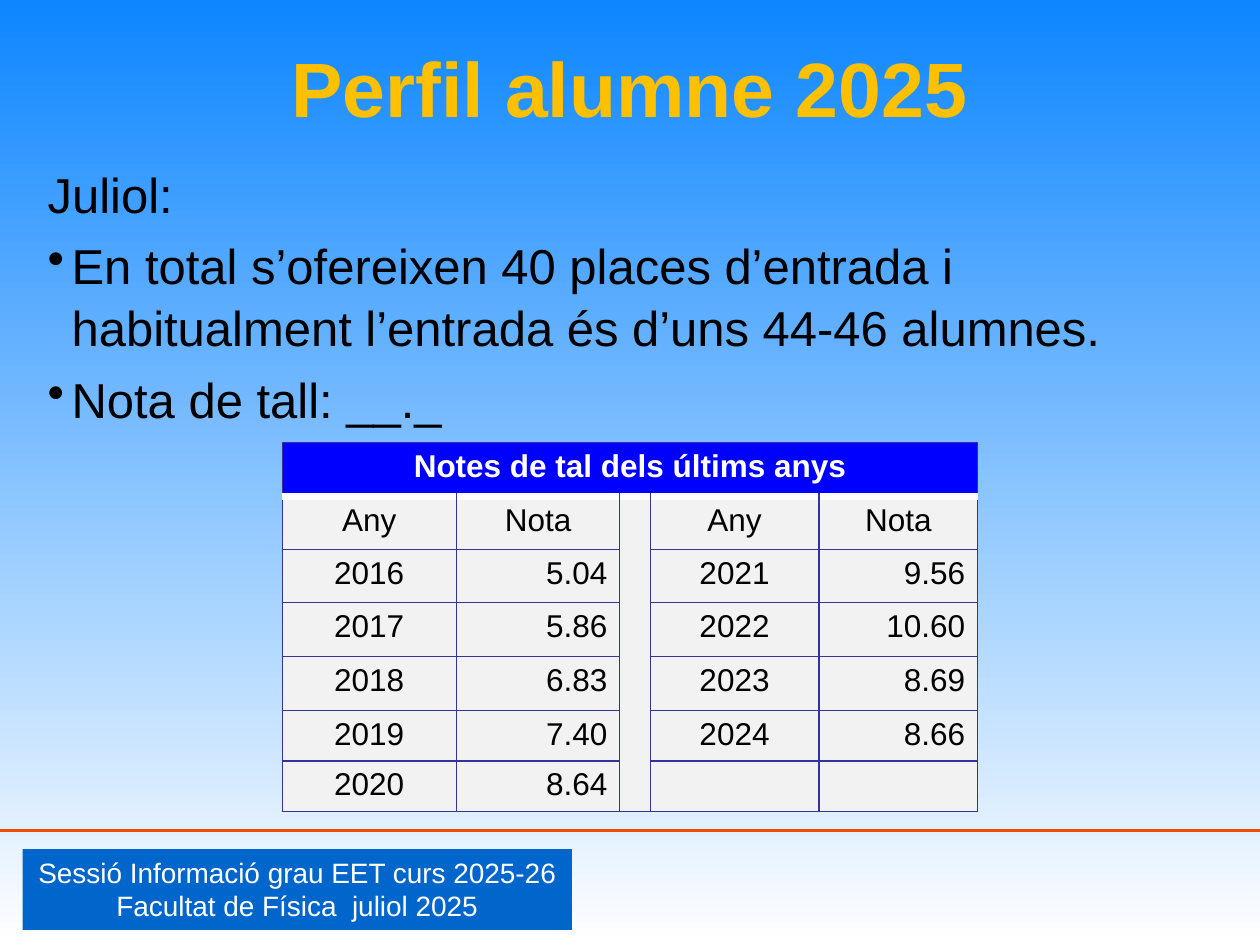
import pptx
import pptx.util
import pptx.dml.color
import pptx.enum.shapes
import pptx.enum.text
import pptx.oxml
import pptx.oxml.ns
import lxml.etree

RGB = pptx.dml.color.RGBColor
SKY = RGB(0x0D, 0x86, 0xFF)
WHITE = RGB(0xFF, 0xFF, 0xFF)
BLACK = RGB(0, 0, 0)
ORANGE = RGB(0xF0, 0x4C, 0x02)
FOOTER_BLUE = RGB(0x00, 0x66, 0xCC)
GOLD = RGB(0xFF, 0xC0, 0x00)
HEADER_BLUE = RGB(0, 0, 0xFF)
CELL_GREY = RGB(0xF2, 0xF2, 0xF2)
BORDER_BLUE = RGB(0x33, 0x33, 0x99)

ALIGN = pptx.enum.text.PP_ALIGN
ANCHOR = pptx.enum.text.MSO_ANCHOR
UNIT = pptx.util.Inches(0.1)
COLUMNS, ROWS = 100, 75

TITLE_FONT = {"name": "Arial", "size": pptx.util.Pt(44), "bold": True, "color": GOLD}
BODY_FONT = {"name": "Arial", "size": pptx.util.Pt(28), "color": BLACK}
FOOTER_FONT = {"name": "Arial", "size": pptx.util.Pt(16), "color": WHITE}
HEADER_FONT = {"name": "Arial", "size": pptx.util.Pt(18), "bold": True, "color": WHITE}
CELL_FONT = {"name": "Arial", "size": pptx.util.Pt(18), "bold": False, "color": BLACK}

COLUMN_SIZES = [13.8, 13, 2.4, 13.4, 12.6]
ROW_SIZES = [4.3, 4.2, 4.2, 4.3, 4.3, 3.7, 3.8]
GRADES = [
    ("Any", "Nota", "", "Any", "Nota"),
    ("2016", "5.04", "", "2021", "9.56"),
    ("2017", "5.86", "", "2022", "10.60"),
    ("2018", "6.83", "", "2023", "8.69"),
    ("2019", "7.40", "", "2024", "8.66"),
    ("2020", "8.64", "", "", ""),
]


def grid(*lengths):
    return [int(length * UNIT) for length in lengths]


def apply_font(font, formats):
    for attribute, value in formats.items():
        if attribute == "color":
            font.color.rgb = value
        else:
            setattr(font, attribute, value)


def write_paragraph(paragraph, text, formats, align):
    paragraph.alignment = align
    run = paragraph.add_run()
    run.text = text
    apply_font(run.font, formats)


def add_bullet(paragraph):
    properties = paragraph._p.get_or_add_pPr()
    indent = pptx.util.Inches(0.19)
    properties.set("marL", str(indent))
    properties.set("indent", str(-indent))
    bullet = lxml.etree.SubElement(properties, pptx.oxml.ns.qn("a:buChar"))
    bullet.set("char", "•")


def draw_background(slide):
    fill = slide.background.fill
    fill.gradient()
    fill.gradient_angle = 270
    for stop, color in zip(fill.gradient_stops, (SKY, WHITE)):
        stop.color.rgb = color


def draw_footer(slide, left, top, width, height):
    rule_y = top - 1.5
    rule = slide.shapes.add_connector(
        pptx.enum.shapes.MSO_CONNECTOR.STRAIGHT, *grid(0, rule_y, COLUMNS, rule_y))
    rule.line.color.rgb = ORANGE
    rule.line.width = pptx.util.Pt(1.5)
    lxml.etree.SubElement(rule._element.spPr, pptx.oxml.ns.qn("a:effectLst"))
    session = slide.shapes.add_shape(
        pptx.enum.shapes.MSO_SHAPE.RECTANGLE, *grid(left, top, width, height))
    session.shadow.inherit = False
    session.fill.solid()
    session.fill.fore_color.rgb = FOOTER_BLUE
    session.line.fill.background()
    frame = session.text_frame
    frame.word_wrap = False
    frame.vertical_anchor = ANCHOR.TOP
    write_paragraph(frame.paragraphs[0], "Sessió Informació grau EET curs 2025-26",
                    FOOTER_FONT, ALIGN.CENTER)
    write_paragraph(frame.add_paragraph(), "Facultat de Física  juliol 2025",
                    FOOTER_FONT, ALIGN.CENTER)


def draw_title(slide, *box):
    frame = slide.shapes.add_textbox(*grid(*box)).text_frame
    frame.word_wrap = True
    frame.vertical_anchor = ANCHOR.MIDDLE
    write_paragraph(frame.paragraphs[0], "Perfil alumne 2025", TITLE_FONT, ALIGN.CENTER)


def draw_body(slide, *box):
    frame = slide.shapes.add_textbox(*grid(*box)).text_frame
    frame.word_wrap = True
    heading = frame.paragraphs[0]
    heading.line_spacing = 1.05
    write_paragraph(heading, "Juliol:", BODY_FONT, ALIGN.LEFT)
    for point in (
        "En total s’ofereixen 40 places d’entrada i habitualment l’entrada és d’uns 44-46 alumnes.",
        "Nota de tall: __._",
    ):
        paragraph = frame.add_paragraph()
        add_bullet(paragraph)
        paragraph.line_spacing = 1.05
        paragraph.space_before = pptx.util.Pt(5.6)
        write_paragraph(paragraph, point, BODY_FONT, ALIGN.LEFT)


def style_cell(cell, fill, white_edge):
    properties = cell._tc.get_or_add_tcPr()
    for edge in ("lnL", "lnR", "lnT", "lnB"):
        color, points = (WHITE, 4.33) if edge == white_edge else (BORDER_BLUE, 0.75)
        border = lxml.etree.SubElement(properties, pptx.oxml.ns.qn("a:" + edge))
        border.set("w", str(pptx.util.Pt(points)))
        solid = lxml.etree.SubElement(border, pptx.oxml.ns.qn("a:solidFill"))
        lxml.etree.SubElement(solid, pptx.oxml.ns.qn("a:srgbClr")).set("val", str(color))
    cell.fill.solid()
    cell.fill.fore_color.rgb = fill


def draw_grades(slide, left, top):
    box = grid(left, top, sum(COLUMN_SIZES), sum(ROW_SIZES))
    table = slide.shapes.add_table(len(ROW_SIZES), len(COLUMN_SIZES), *box).table
    for column, size in zip(table.columns, COLUMN_SIZES):
        column.width = grid(size)[0]
    for row, size in zip(table.rows, ROW_SIZES):
        row.height = grid(size)[0]
    for row_index, row in enumerate(table.rows):
        fill = CELL_GREY if row_index else HEADER_BLUE
        white_edge = {0: "lnB", 1: "lnT"}.get(row_index)
        for cell in row.cells:
            style_cell(cell, fill, white_edge)
    table.cell(0, 0).merge(table.cell(0, 4))
    table.cell(1, 2).merge(table.cell(6, 2))
    write_paragraph(table.cell(0, 0).text_frame.paragraphs[0],
                    "Notes de tal dels últims anys", HEADER_FONT, ALIGN.CENTER)
    for row_index, values in enumerate(GRADES, 1):
        for column_index, value in enumerate(values):
            if value:
                is_grade = row_index > 1 and column_index in (1, 4)
                align = ALIGN.RIGHT if is_grade else ALIGN.CENTER
                paragraph = table.cell(row_index, column_index).text_frame.paragraphs[0]
                write_paragraph(paragraph, value, CELL_FONT, align)


def main():
    deck = pptx.Presentation()
    deck.slide_width, deck.slide_height = grid(COLUMNS, ROWS)
    slide = deck.slides.add_slide(deck.slide_layouts[6])
    draw_background(slide)
    draw_footer(slide, 1.8, 67.4, 43.6, 6.4)
    draw_title(slide, 5, 2.1, 90, 9.5)
    draw_body(slide, 2.8, 12.3, 96.1, 20.5)
    draw_grades(slide, 22.4, 35.1)
    deck.save("out.pptx")


if __name__ == "__main__":
    main()
